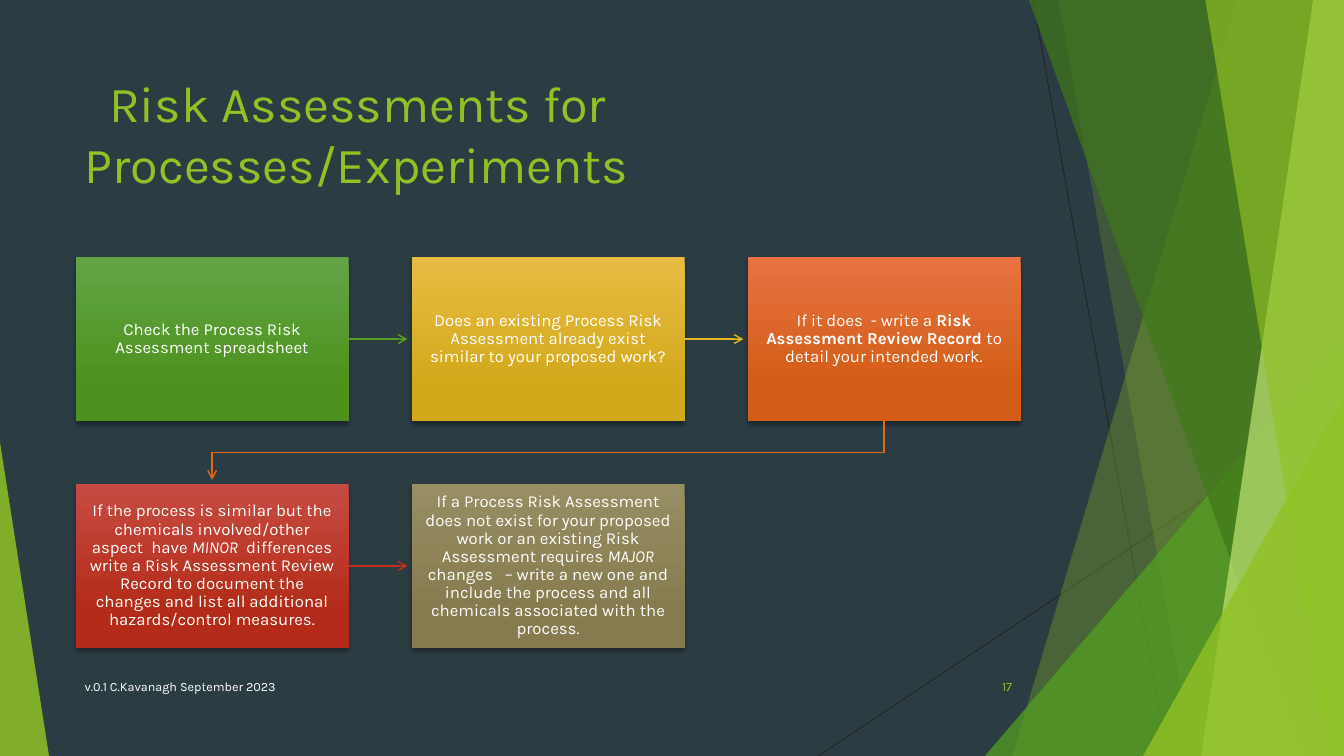
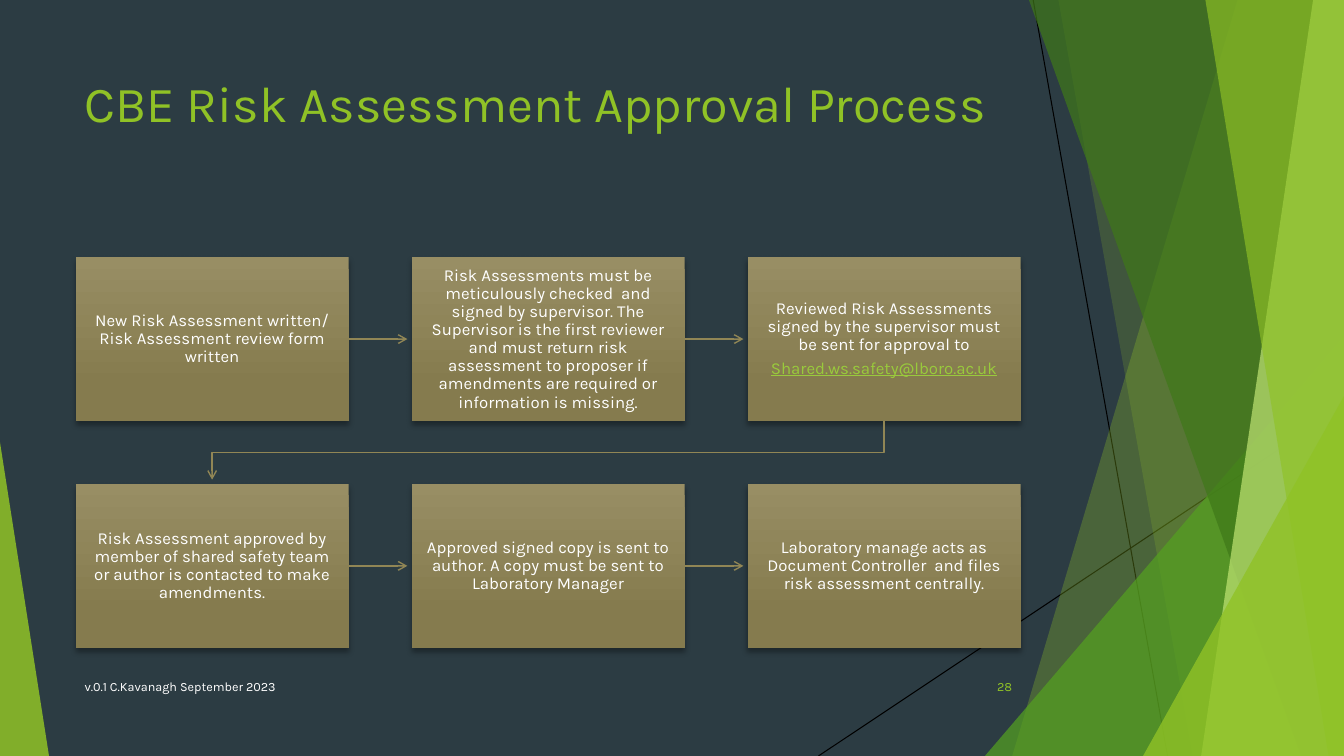
"""Build two risk assessment flow slides."""
from itertools import pairwise

from lxml import etree
from pptx import Presentation
from pptx.dml.color import RGBColor
from pptx.enum import shapes, text
from pptx.oxml.ns import qn
from pptx import util as u

COLORS = {
    "background": "2C3C43", "white": "FFFFFF", "black": "000000", "charcoal": "262626",
    "lime": "90C226", "green": "54A021", "forest": "3F7819", "pale": "C0E474", "link": "99CA3C",
    "green_top": "63A545", "green_bottom": "4D921E",
    "gold": "E6B91E", "gold_top": "E7BC43", "gold_bottom": "D2A91B",
    "orange": "E76618", "orange_top": "E87242", "orange_bottom": "D35D16",
    "red": "C42F1A", "red_top": "C74B42", "red_bottom": "B32B18",
    "khaki": "918655", "khaki_top": "988E64", "khaki_bottom": "857B4E",
}
FONT = "Karla"
WIDTH, HEIGHT = 960, 540
COLUMNS = 3
GRID_LEFT, GRID_TOP = 54, 183.6
STEP_X, STEP_Y = 240, 162
BOX_WIDTH, BOX_HEIGHT = 195, 117.2
ARROW_GAP = 3
FOOTER = "v.0.1 C.Kavanagh September 2023"

PROCESS_STEPS = [
    ("green", [["Check the Process Risk Assessment spreadsheet"]]),
    ("gold", [["Does an existing Process Risk Assessment already exist similar to your "
               "proposed work?"]]),
    ("orange", [["If it does  - write a ", ("Risk Assessment Review Record ", "bold"),
                 "to detail your intended work."]]),
    ("red", [["If the process is similar but the chemicals involved/other aspect  have ",
              ("MINOR", "italic"),
              "  differences write a Risk Assessment Review Record to document the changes "
              "and list all additional hazards/control measures."]]),
    ("khaki", [["If a Process Risk Assessment does not exist for your proposed work or an "
                "existing Risk Assessment requires ", ("MAJOR", "italic"),
                " changes   – write a new one and include the process and all chemicals "
                "associated with the process."]]),
]
APPROVAL_STEPS = [("khaki", paragraphs) for paragraphs in (
    [["New Risk Assessment written/ Risk Assessment review form written"]],
    [["Risk Assessments must be meticulously checked  and signed by supervisor. The "
      "Supervisor is the first reviewer and must return risk assessment to proposer if "
      "amendments are required or information is missing."]],
    [["Reviewed Risk Assessments signed by the supervisor must be sent for approval to"],
     [("Shared.ws.safety@lboro.ac.uk", "link")]],
    [["Risk Assessment approved by member of shared safety team or author is contacted to "
      "make amendments."]],
    [["Approved signed copy is sent to author. A copy must be sent to Laboratory Manager"]],
    [["Laboratory manage acts as Document Controller  and files risk assessment centrally."]],
)]


def rgb(name):
    """Return the named colour."""
    return RGBColor.from_string(COLORS[name])


def points(*values):
    """Convert numbers to point lengths."""
    return [u.Pt(value) for value in values]


def add_runs(paragraph, runs, size, color):
    """Append plain strings and (text, style) pairs as runs."""
    for item in runs:
        content, style = (item, "") if isinstance(item, str) else item
        run = paragraph.add_run()
        run.text = content
        font = run.font
        font.name, font.size = FONT, u.Pt(size)
        font.color.rgb = rgb("link" if style == "link" else color)
        if style:
            font.bold = style == "bold"
            font.italic = style == "italic"
            font.underline = style == "link"


def add_label(slide, box, content, size, color, anchor, align=text.PP_ALIGN.LEFT, indent=0):
    """Add a one-paragraph text box."""
    frame = slide.shapes.add_textbox(*points(*box)).text_frame
    frame.word_wrap = True
    frame.vertical_anchor = anchor
    paragraph = frame.paragraphs[0]
    paragraph.alignment = align
    if indent:
        paragraph._p.get_or_add_pPr().set("indent", str(u.Pt(indent)))
    add_runs(paragraph, [content], size, color)


def style_line(shape, color, width, arrow=False):
    """Colour a line, with an open arrowhead at its end if wanted."""
    shape.line.color.rgb = rgb(color)
    shape.line.width = u.Pt(width)
    if arrow:
        etree.SubElement(shape.line._get_or_add_ln(), qn("a:tailEnd"), type="arrow")


def add_line(slide, start, end, color, width=0.75, arrow=False):
    """Add a straight connector without a shadow."""
    line = slide.shapes.add_connector(shapes.MSO_CONNECTOR.STRAIGHT, *points(*start, *end))
    style_line(line, color, width, arrow)
    etree.SubElement(line._element.spPr, qn("a:effectLst"))
    return line


def add_outline(slide, vertices, close):
    """Add a freeform through the given points."""
    first, *rest = [points(*vertex) for vertex in vertices]
    builder = slide.shapes.build_freeform(*first)
    builder.add_line_segments(rest, close=close)
    shape = builder.convert_to_shape()
    shape.shadow.inherit = False
    return shape


def tint(shape, color, opacity):
    """Give a shape a translucent fill and no line."""
    shape.fill.solid()
    shape.fill.fore_color.rgb = rgb(color)
    value = shape._element.spPr.find(".//" + qn("a:srgbClr"))
    etree.SubElement(value, qn("a:alpha"), val=str(opacity * 1000))
    shape.line.fill.background()


def add_panel(slide, top_x, bottom_x, color, opacity):
    """Add a full-height panel from a slanted edge to the right side."""
    corners = [(top_x, 0), (WIDTH, 0), (WIDTH, HEIGHT), (bottom_x, HEIGHT)]
    tint(add_outline(slide, corners, True), color, opacity)


def add_wedge(slide, left, top, width, peak, color, opacity):
    """Add a right triangle standing on the bottom edge."""
    shape = slide.shapes.add_shape(shapes.MSO_SHAPE.ISOSCELES_TRIANGLE,
                                   *points(left, top, width, HEIGHT - top))
    shape.adjustments[0] = peak
    shape.shadow.inherit = False
    tint(shape, color, opacity)


def decorate(slide, line_color):
    """Add the background and the facets at the slide's sides."""
    slide.background.fill.solid()
    slide.background.fill.fore_color.rgb = rgb("background")
    add_line(slide, (738, 0), (834, HEIGHT), line_color)
    add_line(slide, (WIDTH, 290), (584.6, HEIGHT), line_color)
    add_panel(slide, 884, 723, "lime", 30)
    add_panel(slide, 756, 852, "lime", 20)
    add_wedge(slide, 703.5, 240, 256.5, 1, "green", 72)
    add_panel(slide, 735, 929.5, "forest", 70)
    add_panel(slide, 938, 858, "pale", 70)
    add_panel(slide, 861, 949, "lime", 65)
    add_wedge(slide, 816.5, 283, 143.5, 1, "lime", 80)
    add_wedge(slide, 0, 316, 35, 0, "lime", 85)


def add_shadow(shape, blur, distance):
    """Drop a soft black shadow below a shape."""
    shape.shadow.inherit = False
    effects = shape._element.spPr.find(qn("a:effectLst"))
    shadow = etree.SubElement(effects, qn("a:outerShdw"), blurRad=str(u.Pt(blur)),
                              dist=str(u.Pt(distance)), dir="5400000", rotWithShape="0")
    value = etree.SubElement(shadow, qn("a:srgbClr"), val=COLORS["black"])
    etree.SubElement(value, qn("a:alpha"), val="35000")


def add_step(slide, index, color, paragraphs, shadow):
    """Add a gradient step box at its place in the grid."""
    row, column = divmod(index, COLUMNS)
    box = slide.shapes.add_shape(
        shapes.MSO_SHAPE.RECTANGLE,
        *points(GRID_LEFT + column * STEP_X, GRID_TOP + row * STEP_Y, BOX_WIDTH, BOX_HEIGHT))
    box.fill.gradient()
    box.fill.gradient_angle = 270
    for stop, position, part in zip(box.fill.gradient_stops, (0, 0.78), ("top", "bottom")):
        stop.position = position
        stop.color.rgb = rgb(f"{color}_{part}")
    box.line.fill.background()
    add_shadow(box, *shadow)
    frame = box.text_frame
    frame.word_wrap = True
    frame.vertical_anchor = text.MSO_ANCHOR.MIDDLE
    frame.margin_left = frame.margin_right = u.Pt(9.4)
    frame.margin_top = frame.margin_bottom = u.Pt(10)
    for number, runs in enumerate(paragraphs):
        paragraph = frame.add_paragraph() if number else frame.paragraphs[0]
        paragraph.alignment = text.PP_ALIGN.CENTER
        paragraph.line_spacing = 0.9
        paragraph.space_after = u.Pt(4.2)
        add_runs(paragraph, runs, 12, "white")
    return box


def link_steps(slide, source, target, color):
    """Lead an arrow from one step to the next, across or down a row."""
    if source.top == target.top:
        middle = source.top.pt + BOX_HEIGHT / 2
        arrow = add_line(slide, (source.left.pt + BOX_WIDTH, middle),
                         (target.left.pt - ARROW_GAP, middle), color, 1, True)
        arrow.begin_connect(source, 3)
        return
    start_x, end_x = (box.left.pt + BOX_WIDTH / 2 for box in (source, target))
    start_y, end_y = source.top.pt + BOX_HEIGHT, target.top.pt
    turn_y = (start_y + end_y) / 2
    path = add_outline(slide, [(start_x, start_y), (start_x, turn_y), (end_x, turn_y),
                               (end_x, end_y - ARROW_GAP)], False)
    path.fill.background()
    style_line(path, color, 1, True)


def add_flow(slide, steps, shadow):
    """Lay out the steps and link each to the next."""
    boxes = [add_step(slide, index, color, paragraphs, shadow)
             for index, (color, paragraphs) in enumerate(steps)]
    for (source, target), (color, _) in zip(pairwise(boxes), steps):
        link_steps(slide, source, target, color)


def add_flow_slide(presentation, title, number, steps, line_color, shadow, indent=0):
    """Add a slide with a title, a flow of steps and a footer."""
    slide = presentation.slides.add_slide(presentation.slide_layouts[6])
    decorate(slide, line_color)
    middle = text.MSO_ANCHOR.MIDDLE
    add_label(slide, (53.3, 48, 677, 104), title, 36, "lime", text.MSO_ANCHOR.TOP,
              indent=indent)
    add_label(slide, (53.3, 476, 436, 28.8), FOOTER, 9, "white", middle)
    add_label(slide, (676, 476, 54, 28.8), number, 9, "lime", middle, text.PP_ALIGN.RIGHT)
    add_flow(slide, steps, shadow)


def main():
    """Build and save the presentation."""
    presentation = Presentation()
    presentation.slide_width, presentation.slide_height = points(WIDTH, HEIGHT)
    add_flow_slide(presentation, "Risk Assessments for Processes/Experiments", "17",
                   PROCESS_STEPS, "charcoal", (3, 2), indent=17.5)
    add_flow_slide(presentation, "CBE Risk Assessment Approval Process", "28",
                   APPROVAL_STEPS, "black", (4, 3))
    presentation.save("out.pptx")


if __name__ == "__main__":
    main()
